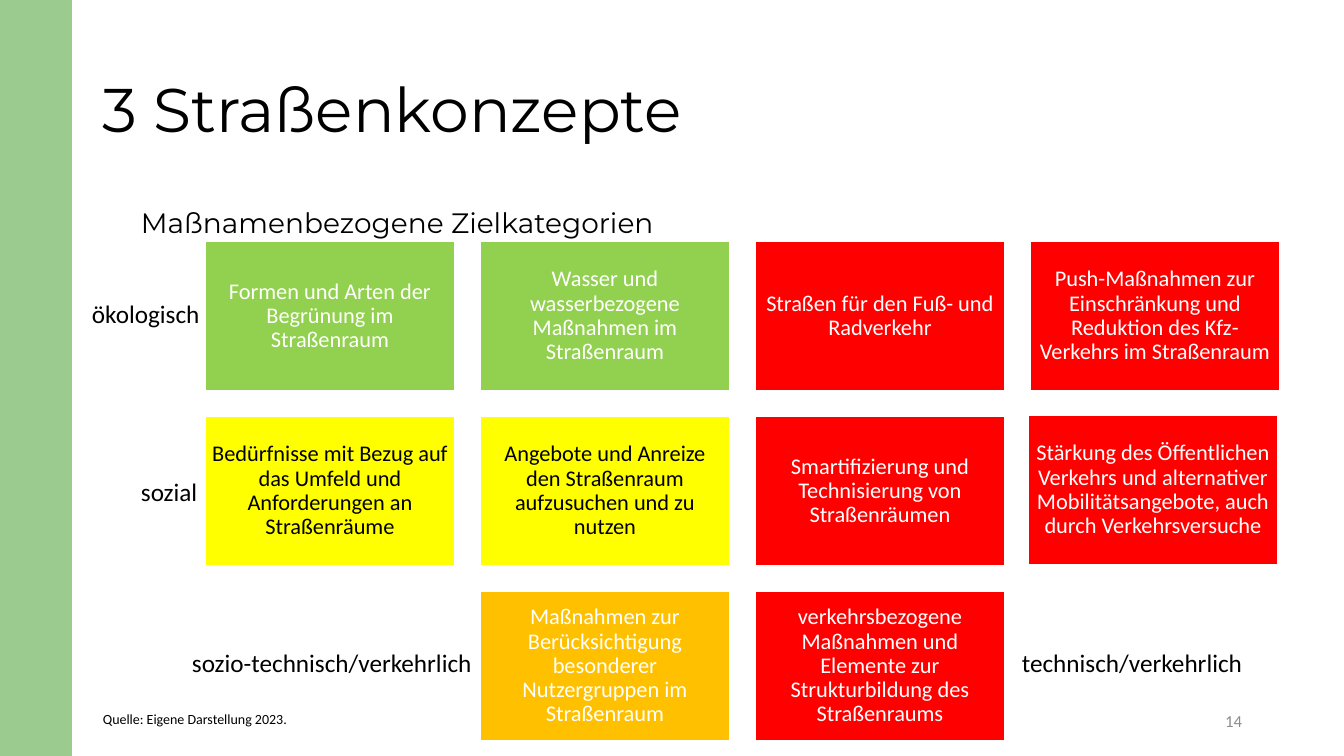
"""Build the slide on goal categories for street concepts."""
import pptx
import pptx.dml.color
import pptx.enum.shapes
import pptx.enum.text
import pptx.util

RGB = pptx.dml.color.RGBColor
ALIGN = pptx.enum.text.PP_ALIGN
ANCHOR = pptx.enum.text.MSO_ANCHOR
Pt = pptx.util.Pt

BLACK = RGB(0, 0, 0)
WHITE = RGB(255, 255, 255)
GREY = RGB(0x8C, 0x8C, 0x8C)
SAGE = RGB(0x9B, 0xCB, 0x8F)
GREEN = RGB(0x92, 0xD0, 0x50)
YELLOW = RGB(255, 255, 0)
AMBER = RGB(255, 0xC0, 0)
RED = RGB(255, 0, 0)

SCALE = 914400 / 100.8
WIDE, HIGH = 1344, 756
LEFT, TOP = 205, 241
BOX_W, BOX_H = 250, 150
STEP_X, STEP_Y = 275, 175
INSET = 7

TITLE = "3 Straßenkonzepte"
HEAD = "Maßnamenbezogene Zielkategorien"
PAGE = "14"

GOALS = [
    (0, 0, GREEN, WHITE, "Formen und Arten der Begrünung im Straßenraum"),
    (0, 1, GREEN, WHITE, "Wasser und wasserbezogene Maßnahmen im Straßenraum"),
    (0, 2, RED, WHITE, "Straßen für den Fuß- und Radverkehr"),
    (0, 3, RED, WHITE, "Push-Maßnahmen zur Einschränkung und Reduktion des "
                       "Kfz-Verkehrs im Straßenraum"),
    (1, 0, YELLOW, BLACK, "Bedürfnisse mit Bezug auf das Umfeld und "
                          "Anforderungen an Straßenräume"),
    (1, 1, YELLOW, BLACK, "Angebote und Anreize den Straßenraum aufzusuchen "
                          "und zu nutzen"),
    (1, 2, RED, WHITE, "Smartifizierung und Technisierung von Straßenräumen"),
    (1, 3, RED, WHITE, "Stärkung des Öffentlichen Verkehrs und alternativer "
                       "Mobilitätsangebote, auch durch Verkehrsversuche"),
    (2, 1, AMBER, WHITE, "Maßnahmen zur Berücksichtigung besonderer "
                         "Nutzergruppen im Straßenraum"),
    (2, 2, RED, WHITE, "verkehrsbezogene Maßnahmen und Elemente zur "
                       "Strukturbildung des Straßenraums"),
]
SHIFT = {(1, 3): (-2, -1)}

LABELS = [
    ((82, 293, 129, 40), 18, "ökologisch"),
    ((131, 471, 78, 40), 18, "sozial"),
    ((182, 642, 303, 40), 18, "sozio-technisch/verkehrlich"),
    ((1012, 642, 243, 40), 18, "technisch/verkehrlich"),
    ((93, 706, 208, 27), 10, "Quelle: Eigene Darstellung 2023."),
]


def px(num):
    return round(num * SCALE)


def write(shape, text, size, color=BLACK, font="Calibri", align=ALIGN.LEFT,
          anchor=ANCHOR.TOP, wrap=True):
    frame = shape.text_frame
    frame.word_wrap = wrap
    frame.vertical_anchor = anchor
    para = frame.paragraphs[0]
    para.alignment = align
    run = para.add_run()
    run.text = text
    run.font.name = font
    run.font.size = Pt(size)
    run.font.color.rgb = color
    return para


def add_text(slide, place, text, size, **style):
    shape = slide.shapes.add_textbox(*map(px, place))
    return write(shape, text, size, **style)


def add_box(slide, place, fill):
    kind = pptx.enum.shapes.MSO_SHAPE.RECTANGLE
    shape = slide.shapes.add_shape(kind, *map(px, place))
    shape.shadow.inherit = False
    shape.fill.solid()
    shape.fill.fore_color.rgb = fill
    shape.line.fill.background()
    return shape


def add_goal(slide, row, col, fill, color, text):
    dx, dy = SHIFT.get((row, col), (0, 0))
    place = (LEFT + col * STEP_X + dx, TOP + row * STEP_Y + dy, BOX_W, BOX_H)
    shape = add_box(slide, place, fill)
    shape.line.color.rgb = WHITE
    shape.line.width = Pt(1)
    frame = shape.text_frame
    frame.margin_left = frame.margin_right = px(INSET)
    frame.margin_top = frame.margin_bottom = px(INSET)
    para = write(shape, text, 16, color, align=ALIGN.CENTER,
                 anchor=ANCHOR.MIDDLE)
    para.line_spacing = 0.9


def main():
    deck = pptx.Presentation()
    deck.slide_width, deck.slide_height = px(WIDE), px(HIGH)
    slide = deck.slides.add_slide(deck.slide_layouts[6])

    add_box(slide, (0, 0, 72, HIGH), SAGE)
    title = add_text(slide, (93, 40, 1159, 146), TITLE, 44,
                     font="Montserrat", anchor=ANCHOR.MIDDLE)
    title.line_spacing = 0.9
    head = add_text(slide, (131, 198, 1164, 43), HEAD, 20, font="Montserrat")
    head.line_spacing = Pt(26)
    head.space_before = Pt(10)
    add_text(slide, (950, 701, 302, 40), PAGE, 12, color=GREY,
             align=ALIGN.RIGHT, anchor=ANCHOR.MIDDLE)

    for goal in GOALS:
        add_goal(slide, *goal)
    for place, size, text in LABELS:
        add_text(slide, place, text, size, wrap=False)

    deck.save("out.pptx")


if __name__ == "__main__":
    main()
